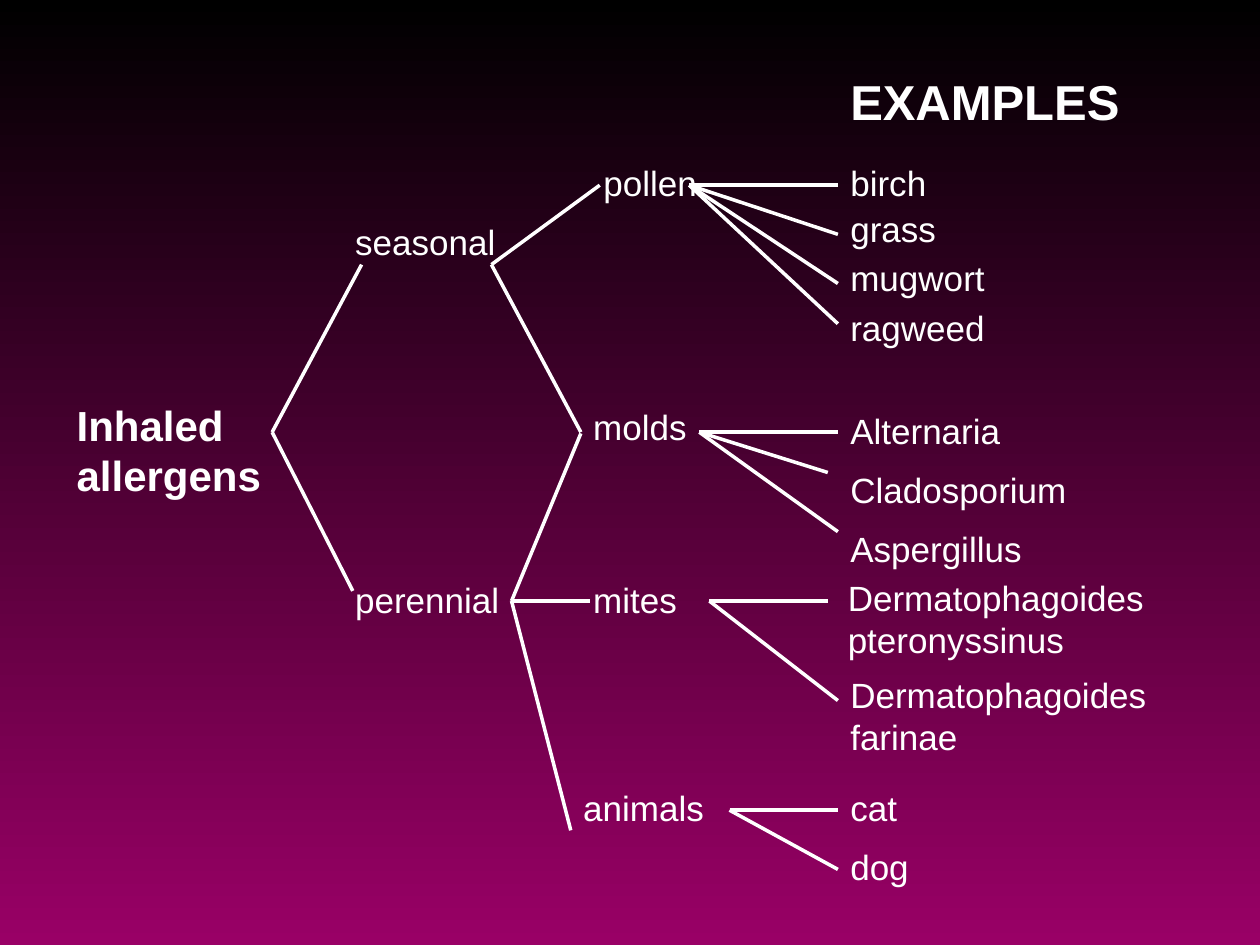
from lxml import etree
from pptx import Presentation
from pptx.dml.color import RGBColor
from pptx.enum.shapes import MSO_CONNECTOR as Link
from pptx.enum.text import MSO_AUTO_SIZE as Fit
from pptx.oxml.ns import qn
from pptx.util import Inches, Pt


def color(code):
    return RGBColor.from_string(code)


class Chart:
    font = "Arial"
    ink = "FFFFFF"
    size = 20
    width = 2

    def __init__(self, slide):
        self.slide = slide

    def back(self, *codes):
        fill = self.slide.background.fill
        fill.gradient()
        fill.gradient_angle = 270
        for stop, code in zip(fill.gradient_stops, codes):
            stop.color.rgb = color(code)

    def text(self, lines, x, y, w, h=0.43, size=None, bold=False, wrap=False):
        box = self.slide.shapes.add_textbox(
            Inches(x), Inches(y), Inches(w), Inches(h))
        frame = box.text_frame
        frame.word_wrap = wrap
        frame.auto_size = Fit.SHAPE_TO_FIT_TEXT
        for i, line in enumerate(lines):
            para = frame.add_paragraph() if i else frame.paragraphs[0]
            run = para.add_run()
            run.text = line
            run.font.name = self.font
            run.font.size = Pt(size or self.size)
            run.font.bold = bold
            run.font.color.rgb = color(self.ink)

    def line(self, start, end):
        ends = [Inches(v) for v in (*start, *end)]
        link = self.slide.shapes.add_connector(Link.STRAIGHT, *ends)
        link.line.color.rgb = color(self.ink)
        link.line.width = Pt(self.width)
        etree.SubElement(link._element.spPr, qn("a:effectLst"))

    def fan(self, start, ends):
        for end in ends:
            self.line(start, end)


def main():
    deck = Presentation()
    deck.slide_width, deck.slide_height = Inches(10), Inches(7.5)
    chart = Chart(deck.slides.add_slide(deck.slide_layouts[6]))
    chart.back("000000", "990066")

    # Headings
    chart.text(["Inhaled", "allergens"], 0.51, 3.12, 1.85, 0.9,
               size=24, bold=True, wrap=True)
    chart.text(["EXAMPLES"], 6.65, 0.52, 2.34, 0.57, size=28, bold=True)

    # Seasons and sources
    for word, x, y, w in [
        ("seasonal", 2.72, 1.7, 1.33),
        ("perennial", 2.72, 4.54, 1.36),
        ("pollen", 4.69, 1.23, 0.95),
        ("molds", 4.61, 3.17, 0.95),
        ("mites", 4.61, 4.54, 0.88),
        ("animals", 4.53, 6.19, 1.17),
    ]:
        chart.text([word], x, y, w)

    # Examples
    col = 6.65
    for word, y, w in [
        ("birch", 1.23, 0.81),
        ("grass", 1.6, 0.89),
        ("mugwort", 1.99, 1.28),
        ("ragweed", 2.38, 1.28),
        ("Alternaria", 3.2, 1.4),
        ("Cladosporium", 3.67, 1.93),
        ("Aspergillus", 4.14, 1.57),
        ("dog", 6.66, 0.68),
    ]:
        chart.text([word], col, y, w)
    chart.text(["cat"], col, 6.19, 1.72, wrap=True)
    for kind, x, y in [("pteronyssinus", 6.63, 4.53), ("farinae", col, 5.3)]:
        chart.text(["Dermatophagoides", kind], x, y, 2.55, 0.77)

    # Branches, each fanning out from one point
    near = 6.57
    for start, ends in [
        ((2.16, 3.43), [(2.87, 2.1), (2.8, 4.69)]),
        ((3.9, 2.1), [(4.76, 1.47), (4.61, 3.43)]),
        ((4.06, 4.77), [(4.61, 3.44), (4.68, 4.77), (4.53, 6.59)]),
        ((5.47, 1.47), [(col, y) for y in (1.47, 1.86, 2.25, 2.57)]),
        ((5.55, 3.43), [(col, 3.43), (near, 3.75), (col, 4.22)]),
        ((5.63, 4.77), [(near, 4.77), (col, 5.56)]),
        ((5.79, 6.43), [(col, 6.43), (col, 6.9)]),
    ]:
        chart.fan(start, ends)

    deck.save("out.pptx")


if __name__ == "__main__":
    main()
